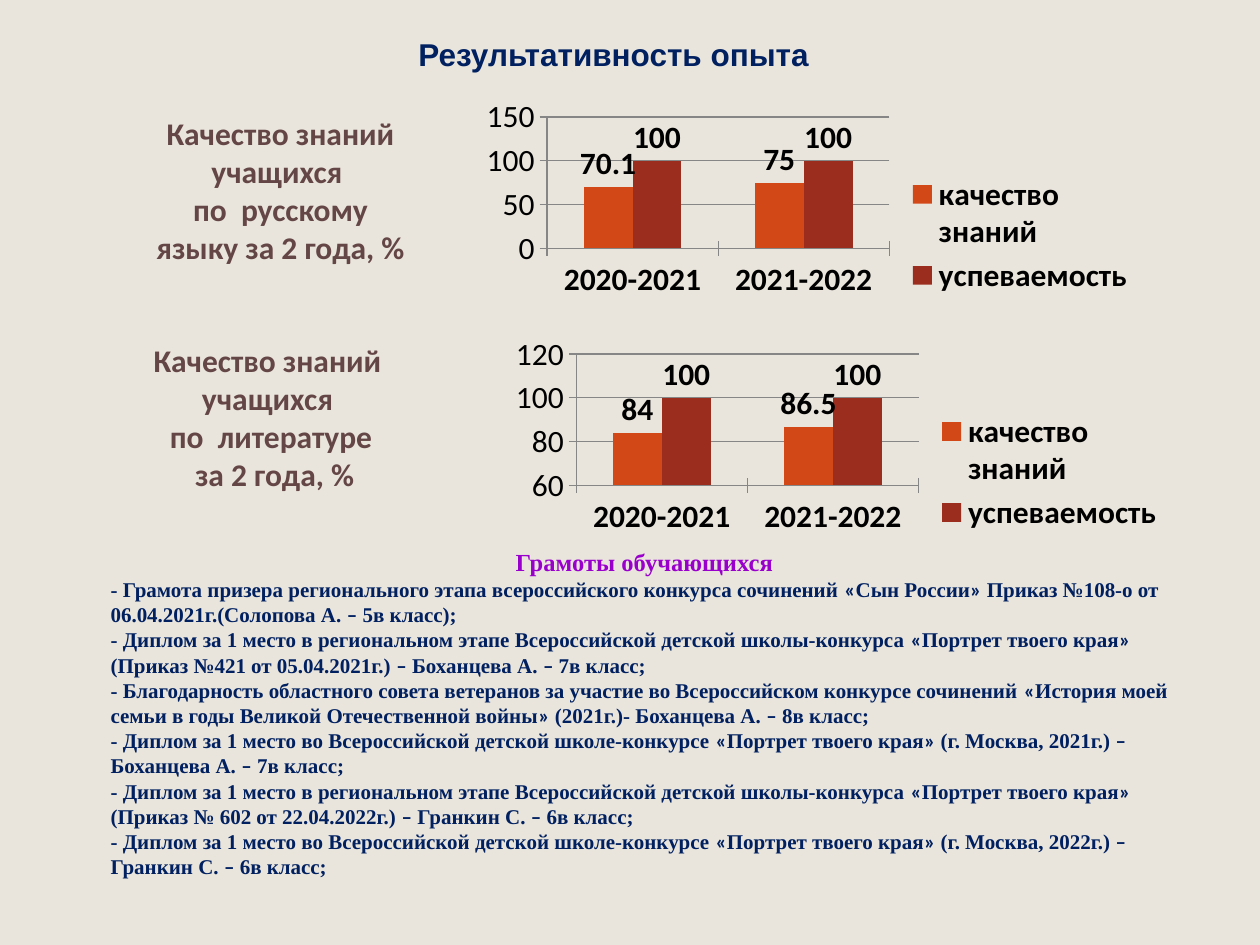
from itertools import groupby

from lxml import etree
from pptx import Presentation
from pptx.chart.data import CategoryChartData as Data
from pptx.dml.color import RGBColor as RGB
from pptx.enum.chart import XL_CHART_TYPE as Kind
from pptx.enum.chart import XL_LABEL_POSITION as Spot
from pptx.enum.chart import XL_LEGEND_POSITION as Side
from pptx.enum.chart import XL_TICK_MARK as Tick
from pptx.enum.text import MSO_ANCHOR as Anchor
from pptx.enum.text import PP_ALIGN as Align
from pptx.oxml.ns import qn
from pptx.util import Cm, Pt

SERIF = "Times New Roman"
SANS = "Calibri"
NAVY = "002060"
BROWN = "644646"
GREY = "868686"
YEARS = ["2020-2021", "2021-2022"]
FRAME = {"x": 0.147, "y": 0.052, "w": 0.486, "h": 0.499}
AWARDS = [
    "- Грамота призера регионального этапа всероссийского конкурса сочинений "
    "«Сын России» Приказ №108-о от 06.04.2021г.(Солопова А. – 5в класс);",
    "- Диплом за 1 место в региональном этапе Всероссийской детской школы-конкурса "
    "«Портрет твоего края» (Приказ №421 от 05.04.2021г.) – Боханцева А. – 7в класс;",
    "- Благодарность областного совета ветеранов за участие во Всероссийском конкурсе сочинений "
    "«История моей семьи в годы Великой Отечественной войны» (2021г.)- Боханцева А. – 8в класс;",
    "- Диплом за 1 место во Всероссийской детской школе-конкурсе "
    "«Портрет твоего края» (г. Москва, 2021г.) – Боханцева А. – 7в класс;",
    "- Диплом за 1 место в региональном этапе Всероссийской детской школы-конкурса "
    "«Портрет твоего края» (Приказ № 602 от 22.04.2022г.) – Гранкин С. – 6в класс;",
    "- Диплом за 1 место во Всероссийской детской школе-конкурсе "
    "«Портрет твоего края» (г. Москва, 2022г.) – Гранкин С. – 6в класс;",
]


def paint(color, code):
    """Set a colour from a hex string."""
    color.rgb = RGB.from_string(code)


def style(font, size, code, name=SANS, bold=True):
    """Set the look of a font."""
    font.size, font.name, font.bold = Pt(size), name, bold
    paint(font.color, code)


def add_box(slide, left, top, width, height, wrap=True):
    """Add an empty text box and return its frame."""
    box = slide.shapes.add_textbox(Cm(left), Cm(top), Cm(width), Cm(height))
    box.text_frame.word_wrap = wrap
    return box.text_frame


def add_line(frame, align=Align.CENTER):
    """Return the next free paragraph of a frame."""
    first = frame.paragraphs[0]
    line = frame.add_paragraph() if first.runs else first
    line.alignment = align
    return line


def add_run(line, text, size, code, name=SANS):
    """Add one bold run to a paragraph."""
    run = line.add_run()
    run.text = text
    style(run.font, size, code, name)


def add_label(slide, place, lines, name=SANS, code=BROWN, wrap=True):
    """Add a centred label, one paragraph a line."""
    frame = add_box(slide, *place, wrap=wrap)
    for text in lines:
        add_run(add_line(frame), text, 18, code, name)


def add_awards(slide):
    """Add the list of awards, with quotes and dashes in sans."""
    frame = add_box(slide, 1.98, 10.87, 22.02, 7.01)
    frame.vertical_anchor = Anchor.MIDDLE
    add_run(add_line(frame), "Грамоты обучающихся", 14, "9900CC", SERIF)
    for award in AWARDS:
        line = add_line(frame, Align.LEFT)
        for mark, part in groupby(award, lambda sign: sign in "«»–"):
            add_run(line, "".join(part), 12, NAVY, SANS if mark else SERIF)


def set_plot(chart):
    """Fix the inner plot area in fractions of the chart."""
    area = chart._chartSpace.chart.plotArea
    for old in area.findall(qn("c:layout")):
        area.remove(old)
    layout = etree.Element(qn("c:layout"))
    manual = etree.SubElement(layout, qn("c:manualLayout"))
    marks = {"layoutTarget": "inner", "xMode": "edge", "yMode": "edge", **FRAME}
    for key, value in marks.items():
        etree.SubElement(manual, qn(f"c:{key}")).set("val", str(value))
    area.insert(0, layout)


def set_axes(chart, low, high, step):
    """Style both axes and scale the value axis."""
    cat, val = chart.category_axis, chart.value_axis
    for axis in (cat, val):
        axis.major_tick_mark, axis.minor_tick_mark = Tick.CROSS, Tick.NONE
        paint(axis.format.line.color, GREY)
        style(axis.tick_labels.font, 18, "000000", bold=axis is cat)
    val.minimum_scale, val.maximum_scale, val.major_unit = low, high, step
    val.has_major_gridlines = True
    paint(val.major_gridlines.format.line.color, GREY)


def add_bars(slide, left, top, marks, scale):
    """Add a column chart of marks against pass rate."""
    data = Data()
    data.categories = YEARS
    data.add_series("качество знаний", marks)
    data.add_series("успеваемость", [100, 100])
    place = Cm(left), Cm(top), Cm(14.2), Cm(5.41)
    chart = slide.shapes.add_chart(Kind.COLUMN_CLUSTERED, *place, data).chart
    chart.has_title = False
    style(chart.font, 18, "000000", bold=False)
    chart.has_legend = True
    chart.legend.position = Side.RIGHT
    chart.legend.include_in_layout = False
    style(chart.legend.font, 18, "000000")
    plot = chart.plots[0]
    plot.gap_width, plot.overlap, plot.vary_by_categories = 150, 0, False
    for series, code in zip(plot.series, ("D34817", "9B2D1F")):
        series.format.fill.solid()
        paint(series.format.fill.fore_color, code)
        labels = series.data_labels
        labels.show_value, labels.position = True, Spot.OUTSIDE_END
        style(labels.font, 18, "000000")
    set_axes(chart, *scale)
    set_plot(chart)


def main():
    """Build the slide and save it."""
    deck = Presentation()
    deck.slide_width, deck.slide_height = Cm(25.4), Cm(19.05)
    slide = deck.slides.add_slide(deck.slide_layouts[6])
    slide.background.fill.solid()
    paint(slide.background.fill.fore_color, "E9E5DC")
    add_bars(slide, 8.94, 1.98, [70.1, 75], (0, 150, 50))
    add_label(slide, (2.77, 2.18, 5.77, 3.33),
              ["Качество знаний учащихся ", "по  русскому языку за 2 года, %"])
    add_bars(slide, 9.53, 6.76, [84, 86.5], (60, 120, 20))
    add_label(slide, (1.4, 6.76, 8.13, 3.33),
              ["Качество знаний ", "учащихся ", "по  литературе", " за 2 года, %"])
    add_label(slide, (8.13, 0.58, 8.48, 1.02), ["Результативность опыта"],
              "Arial", NAVY, False)
    add_awards(slide)
    deck.save("out.pptx")


if __name__ == "__main__":
    main()
